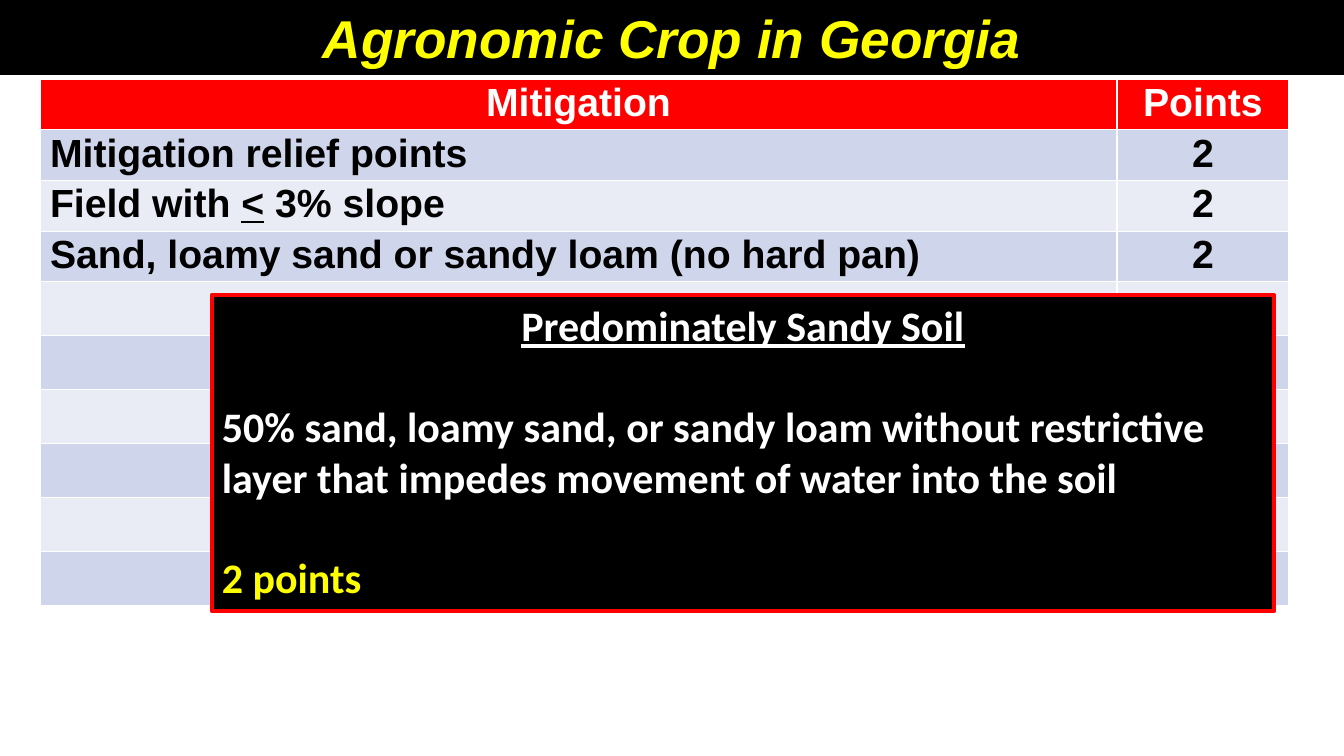
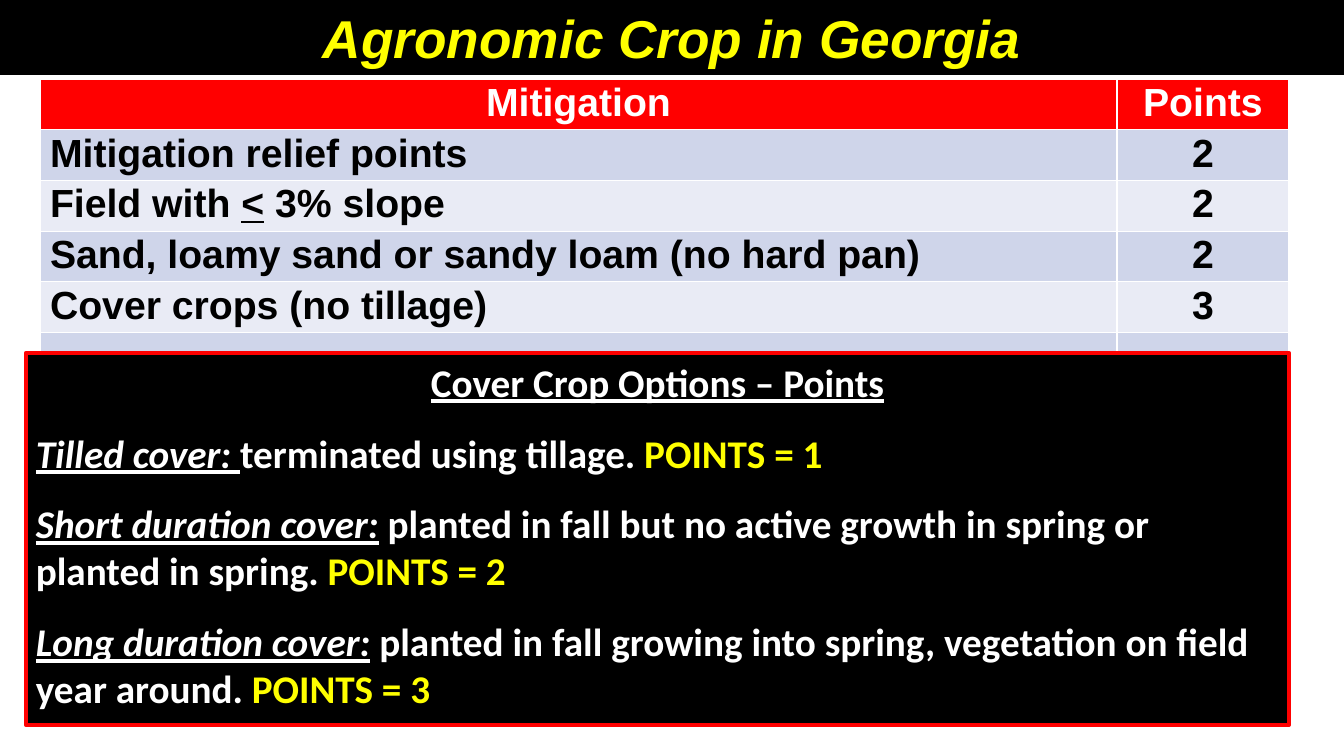
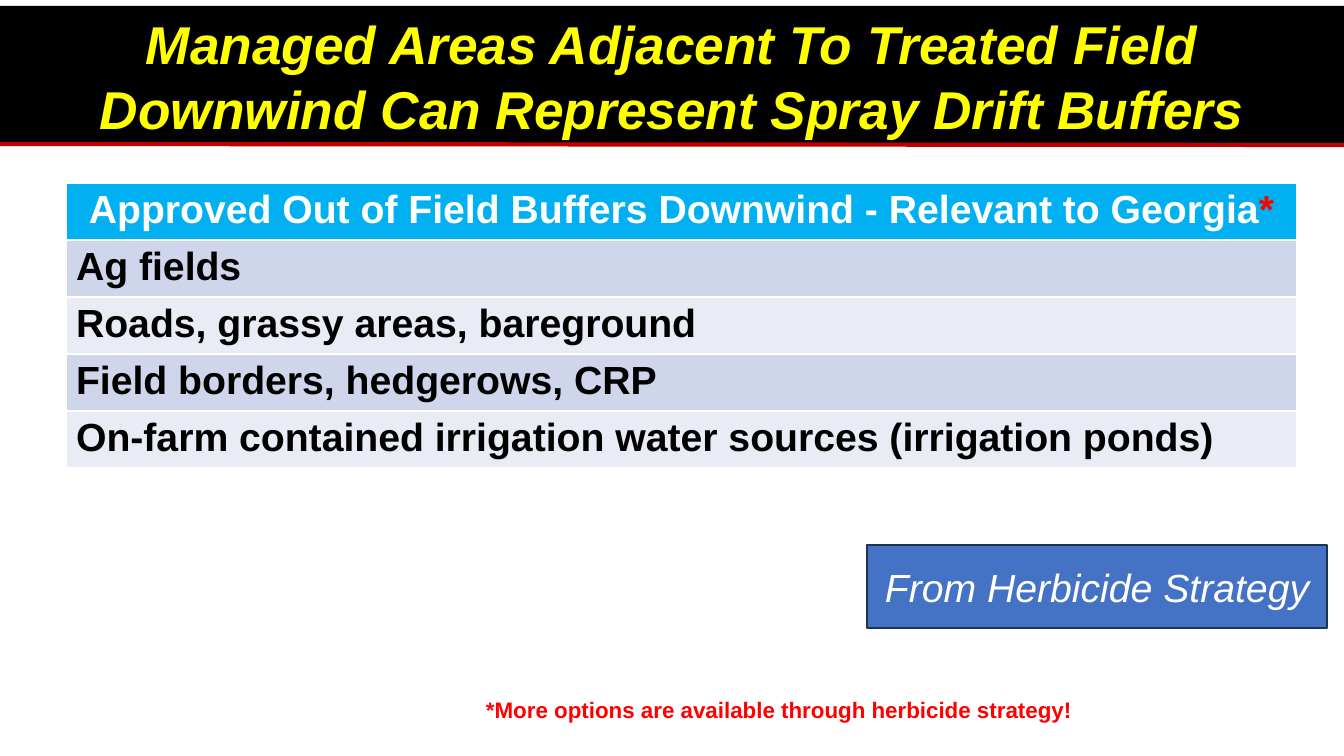
import dataclasses

import lxml.etree
import pptx
import pptx.dml.color
import pptx.enum.shapes
import pptx.enum.text
import pptx.oxml.ns
import pptx.util


@dataclasses.dataclass(frozen=True)
class Theme:
    black: str = "000000"
    white: str = "FFFFFF"
    yellow: str = "FFFF00"
    red: str = "FF0000"
    rule: str = "C00000"
    sky: str = "00B0F0"
    blue: str = "4472C4"
    navy: str = "1E3256"
    bands: tuple = ("CFD5EA", "E9EBF5")
    head: str = "Arial"
    body: str = "Calibri"
    title: int = 38
    large: int = 30
    text: int = 28
    note: int = 16


theme = Theme()
Pt = pptx.util.Pt
LEFT = pptx.enum.text.PP_ALIGN.LEFT
MID = pptx.enum.text.PP_ALIGN.CENTER
RGB = pptx.dml.color.RGBColor.from_string
PX = 9071.43


def px(*sizes):
    return [round(size * PX) for size in sizes]


def write(para, runs, size, color, font=theme.head, bold=True, italic=None, align=LEFT):
    """Fill a paragraph; runs are (text, marks): u underline, i italic, y yellow, r red."""
    para.alignment = align
    base = para.font
    base.size, base.name, base.bold, base.italic = Pt(size), font, bold, italic
    base.color.rgb = RGB(color)
    for text, marks in runs:
        run = para.add_run()
        run.text = text
        if "u" in marks:
            run.font.underline = True
        if "i" in marks:
            run.font.italic = True
        if "y" in marks:
            run.font.color.rgb = RGB(theme.yellow)
        if "r" in marks:
            run.font.color.rgb = RGB(theme.red)


crops = [
    [("Mitigation relief points", "")],
    [("Field with ", ""), ("<", "u"), (" 3% slope", "")],
    [("Sand, loamy sand or sandy loam (no hard pan)", "")],
    [("Cover crops (no tillage)", "")],
]
points = [[("2", "")], [("2", "")], [("2", "")], [("3", "")]]
head = [[("Mitigation", "")], [("Points", "")]]
rows = [head] + [list(pair) for pair in zip(crops, points)]
blank = [[], []]

sand = [
    [("Predominately Sandy Soil", "u")],
    [("50% sand, loamy sand, or sandy loam without restrictive layer "
      "that impedes movement of water into the soil", "")],
    [("2 points", "y")],
]
cover = [
    [("Cover Crop Options – Points", "u")],
    [("Tilled cover: ", "ui"), ("terminated using tillage. ", ""), ("POINTS = 1", "y")],
    [("Short duration cover:", "ui"),
     (" planted in fall but no active growth in spring or planted in spring. ", ""),
     ("POINTS = 2", "y")],
    [("Long duration cover:", "ui"),
     (" planted in fall growing into spring, vegetation on field year around. ", ""),
     ("POINTS = 3", "y")],
]
areas = [
    [[("Approved Out of Field Buffers Downwind - Relevant to Georgia", ""), ("*", "r")]],
    [[("Ag fields", "")]],
    [[("Roads, grassy areas, bareground", "")]],
    [[("Field borders, hedgerows, CRP", "")]],
    [[("On-farm contained irrigation water sources (irrigation ponds)", "")]],
]

crop = dict(title="Agronomic Crop in Georgia", band=(0, 0, 1344, 75),
            spot=(40, 79), cols=(1077, 172), fill=theme.red, tall=50, lead=Pt(29))
pages = [
    dict(crop, rows=rows[:4] + [blank] * 6,
         box=(212, 295, 1062, 316), lines=sand, size=theme.large, gap=36),
    dict(crop, rows=rows + [blank] * 5,
         box=(26, 353, 1263, 372), lines=cover, size=theme.text, gap=17),
    dict(title="Managed Areas Adjacent To Treated Field Downwind "
               "Can Represent Spray Drift Buffers",
         band=(0, 6, 1344, 139), spot=(66, 183), cols=(1231,), fill=theme.sky,
         tall=57, lead=None, rows=areas),
]

deck = pptx.Presentation()
deck.slide_width, deck.slide_height = px(1344, 756)

for page in pages:
    slide = deck.slides.add_slide(deck.slide_layouts[6])

    size = (sum(page["cols"]), page["tall"] * len(page["rows"]))
    grid = slide.shapes.add_table(
        len(page["rows"]), len(page["cols"]), *px(*page["spot"], *size)).table
    for col, width in zip(grid.columns, page["cols"]):
        col.width = px(width)[0]
    for r, row in enumerate(page["rows"]):
        grid.rows[r].height = px(page["tall"] if any(row) else 54)[0]
        for c, runs in enumerate(row):
            cell = grid.cell(r, c)
            cell.fill.solid()
            cell.fill.fore_color.rgb = RGB(theme.bands[(r - 1) % 2] if r else page["fill"])
            if runs:
                para = cell.text_frame.paragraphs[0]
                para.line_spacing = page["lead"]
                write(para, runs, theme.text, theme.black if r else theme.white,
                      align=LEFT if r and c == 0 else MID)

    title = dict(size=theme.title, color=theme.yellow, italic=True, align=MID)
    boxes = [(page["band"], theme.black, None, 0, [[(page["title"], "")]], title)]
    if "box" in page:
        style = dict(size=page["size"], color=theme.white, font=theme.body)
        boxes.append((page["box"], theme.black, theme.red, 3, page["lines"], style))
    else:
        boxes.append(((461, 691, 636, 37), theme.white, None, 0,
                      [[("*More options are available through herbicide strategy!", "")]],
                      dict(size=theme.note, color=theme.red, align=MID)))
        boxes.append(((867, 545, 460, 83), theme.blue, theme.navy, 1,
                      [[("From Herbicide Strategy", "")]],
                      dict(size=theme.text, color=theme.white, bold=False,
                           italic=True, align=MID)))

    for place, fill, edge, width, lines, style in boxes:
        box = slide.shapes.add_shape(pptx.enum.shapes.MSO_SHAPE.RECTANGLE, *px(*place))
        box.shadow.inherit = False
        box.fill.solid()
        box.fill.fore_color.rgb = RGB(fill)
        if edge:
            box.line.color.rgb = RGB(edge)
            box.line.width = Pt(width)
        else:
            box.line.fill.background()
        frame = box.text_frame
        frame.word_wrap = True
        anchor = pptx.enum.text.MSO_ANCHOR
        frame.vertical_anchor = anchor.MIDDLE if fill == theme.blue else anchor.TOP
        for n, runs in enumerate(lines):
            para = frame.add_paragraph() if n else frame.paragraphs[0]
            if n:
                para.space_before = Pt(page["gap"])
            if style is title:
                para.line_spacing = Pt(46)
            top = len(lines) > 1 and n == 0
            write(para, runs, **(dict(style, align=MID) if top else style))

    if "box" not in page:
        rule = slide.shapes.add_connector(
            pptx.enum.shapes.MSO_CONNECTOR.STRAIGHT, *px(0, 144, 1344, 145))
        rule.line.color.rgb = RGB(theme.rule)
        rule.line.width = Pt(3)
        lxml.etree.SubElement(rule._element.spPr, pptx.oxml.ns.qn("a:effectLst"))

deck.save("out.pptx")
